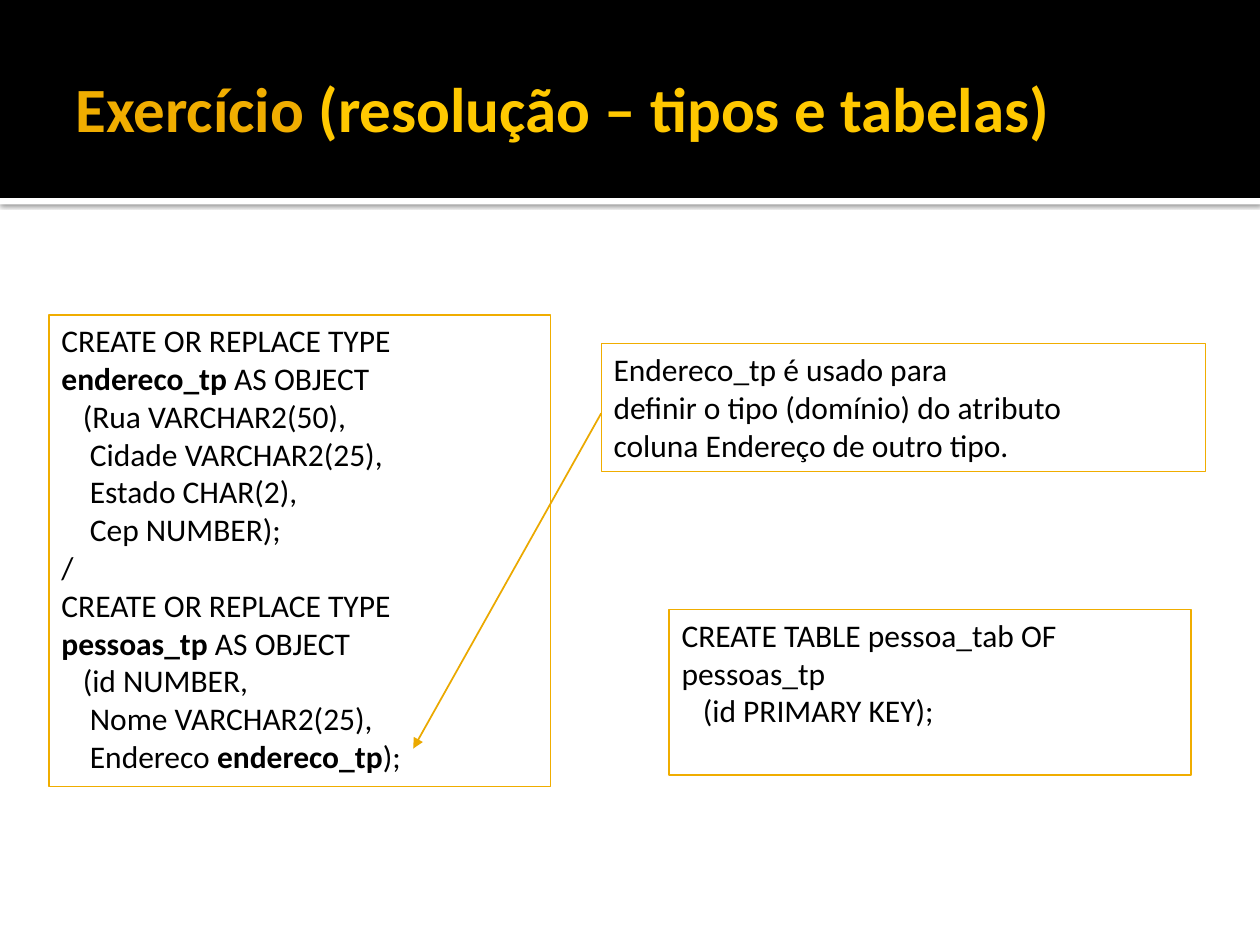
from lxml.etree import SubElement
from pptx import Presentation
from pptx.dml.color import RGBColor
from pptx.enum.shapes import MSO_CONNECTOR, MSO_SHAPE
from pptx.enum.text import MSO_ANCHOR, MSO_AUTO_SIZE, PP_ALIGN
from pptx.oxml import parse_xml
from pptx.oxml.ns import nsdecls, qn
from pptx.util import Cm, Pt

COLORS = {
    "black": "000000",
    "white": "FFFFFF",
    "amber": "F0AD00",
    "yellow": "FFC800",
    "arrow": "EBA900",
}
FONT = "Calibri"

TYPE_CODE = [
    [("CREATE OR REPLACE TYPE ", False), ("endereco_tp", True), (" AS OBJECT", False)],
    [("   (Rua VARCHAR2(50),", False)],
    [("    Cidade VARCHAR2(25),", False)],
    [("    Estado CHAR(2),", False)],
    [("    Cep NUMBER);", False)],
    [("/", False)],
    [("CREATE OR REPLACE TYPE ", False), ("pessoas_tp", True), (" AS OBJECT", False)],
    [("   (id NUMBER,", False)],
    [("    Nome VARCHAR2(25),", False)],
    [("    Endereco ", False), ("endereco_tp", True), (");", False)],
]
TABLE_CODE = [
    [("CREATE TABLE pessoa_tab OF pessoas_tp", False)],
    [("   (id PRIMARY KEY);", False)],
]
TYPE_NOTE = [
    [("Endereco_tp é usado para", False)],
    [("definir o tipo (domínio) do atributo", False)],
    [("coluna Endereço de outro tipo.", False)],
]


def color(name):
    return RGBColor.from_string(COLORS[name])


def add_band(page, left, top, width, height, fill):
    band = page.shapes.add_shape(
        MSO_SHAPE.RECTANGLE, Cm(left), Cm(top), Cm(width), Cm(height)
    )
    band.shadow.inherit = False
    band.fill.solid()
    band.fill.fore_color.rgb = color(fill)
    band.line.fill.background()
    return band


def add_shadow(shape):
    effects = shape._element.spPr.find(qn("a:effectLst"))
    effects.append(parse_xml(
        f'<a:outerShdw {nsdecls("a")} blurRad="{Pt(2.5)}" dist="{Pt(0.8)}" '
        f'dir="5400000" algn="tl" rotWithShape="0">'
        f'<a:srgbClr val="{COLORS["black"]}"><a:alpha val="60000"/></a:srgbClr>'
        f'</a:outerShdw>'
    ))


def add_header(page, left, top, width, height):
    rule = add_band(page, left, top + height, width, 0.13, "white")
    add_shadow(rule)
    bar = add_band(page, left, top, width, height, "black")

    title = page.shapes.title
    bar.element.addnext(title.element)
    title.left, title.top = Cm(left + 1.27), Cm(top + 0.43)
    title.width, title.height = Cm(width - 2.54), Cm(height - 0.51)
    frame = title.text_frame
    frame.word_wrap = True
    frame.auto_size = MSO_AUTO_SIZE.NONE
    frame.vertical_anchor = MSO_ANCHOR.MIDDLE
    frame.margin_left = Cm(0.25)
    frame.margin_right = frame.margin_top = frame.margin_bottom = Cm(0.13)
    para = frame.paragraphs[0]
    para.alignment = PP_ALIGN.LEFT
    para.font.name = FONT
    para.font.size = Pt(36)
    para.font.bold = True
    for text, name in [
        ("Exercício ", "amber"),
        ("(resolução – tipos e tabelas)", "yellow"),
    ]:
        span = para.add_run()
        span.text = text
        span.font.color.rgb = color(name)


def add_text_panel(page, left, top, width, height, lines, line_width=0.75):
    box = page.shapes.add_textbox(Cm(left), Cm(top), Cm(width), Cm(height))
    box.line.color.rgb = color("amber")
    box.line.width = Pt(line_width)
    frame = box.text_frame
    frame.word_wrap = True
    frame.auto_size = MSO_AUTO_SIZE.SHAPE_TO_FIT_TEXT
    for index, line in enumerate(lines):
        para = frame.add_paragraph() if index else frame.paragraphs[0]
        para.font.name = FONT
        para.font.size = Pt(18)
        para.font.color.rgb = color("black")
        for text, bold in line:
            span = para.add_run()
            span.text = text
            if bold:
                span.font.bold = True


def add_arrow(page, start, end):
    arrow = page.shapes.add_connector(
        MSO_CONNECTOR.STRAIGHT, *(Cm(value) for value in (*start, *end))
    )
    arrow.line.color.rgb = color("arrow")
    arrow.line.width = Pt(1)
    SubElement(arrow.line._get_or_add_ln(), qn("a:tailEnd"), type="triangle")
    SubElement(arrow._element.spPr, qn("a:effectLst"))


def main():
    deck = Presentation()
    deck.slide_width, deck.slide_height = Cm(25.4), Cm(19.05)
    page = deck.slides.add_slide(deck.slide_layouts[5])
    add_header(page, 0, 0, 25.4, 3.99)
    add_text_panel(page, 0.99, 6.35, 10.11, 9.5, TYPE_CODE)
    add_text_panel(page, 13.49, 12.29, 10.52, 3.33, TABLE_CODE, line_width=1)
    add_text_panel(page, 12.12, 6.93, 12.19, 2.57, TYPE_NOTE)
    add_arrow(page, (12.12, 8.33), (8.33, 15.09))
    deck.save("out.pptx")


if __name__ == "__main__":
    main()
